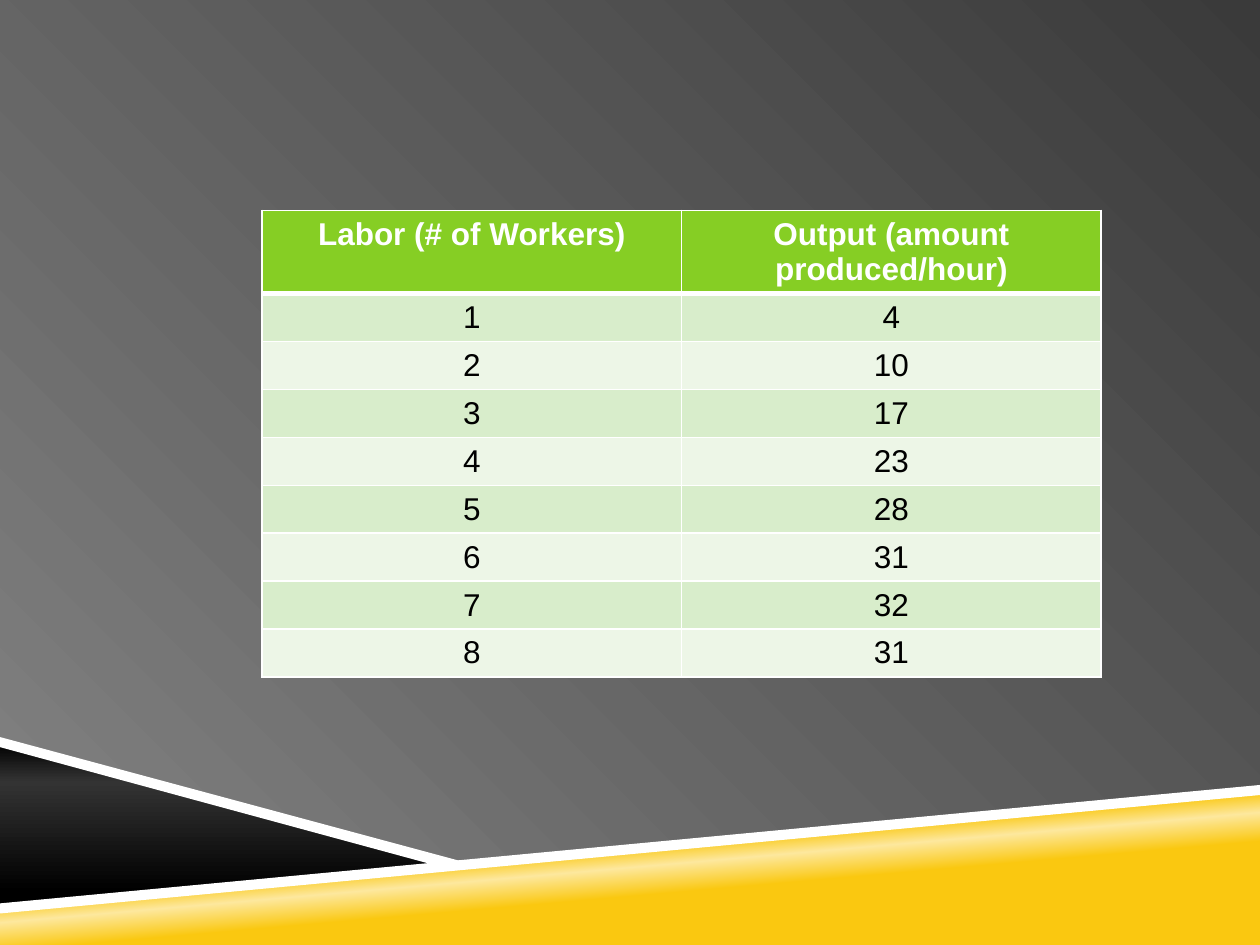
from lxml import etree
from pptx import Presentation
from pptx.dml.color import RGBColor
from pptx.enum.text import PP_ALIGN
from pptx.oxml import parse_xml
from pptx.oxml.ns import nsdecls, qn
from pptx.util import Inches, Pt

HEADINGS = ("Labor (# of Workers)", "Output (amount produced/hour)")
OUTPUTS = (4, 10, 17, 23, 28, 31, 32, 31)
ROWS = [HEADINGS] + [(str(labor), str(output)) for labor, output in enumerate(OUTPUTS, 1)]

BACKDROP = [(0, "848484"), (100, "3A3A3A")]
GOLD = [(0, "FAC810"), (39, "FAC810"), (50, "FDE89E"), (58, "FAC810"), (100, "FAC810")]
BLACK = [(0, "000000"), (24, "333333"), (90, "000000"), (100, "000000")]
FROM_BOTTOM_LEFT = '<a:path path="circle"><a:fillToRect t="100000" r="100000"/></a:path>'
GOLD_DIRECTION = f'<a:lin ang="{265 * 60000}" scaled="0"/>'
BLACK_DIRECTION = f'<a:lin ang="{90 * 60000}" scaled="0"/>'

BANDS = [
    ([(0, 7.21), (10, 6.27), (10, 7.5), (0, 7.5)], GOLD, GOLD_DIRECTION),
    ([(0, 5.89), (3.59, 6.85), (0, 7.21)], BLACK, BLACK_DIRECTION),
    ([(10, 6.23), (0, 7.17), (0, 7.25), (10, 6.31)], "FFFFFF", None),
    ([(0, 5.85), (0, 5.93), (3.5, 6.88), (3.75, 6.86)], "FFFFFF", None),
]

LEFT, TOP, COLUMN_WIDTH = 2.08, 1.67, 3.33
HEADER_HEIGHT, ROW_HEIGHT = 0.64, 0.37
HEADER_FILL, STRIPES = "86CE24", ("EDF6E7", "D8EDCB")


def color(value):
    return RGBColor.from_string(value)


def set_gradient(fill, owner, stops, direction):
    fill.gradient()
    default = owner.find(".//" + qn("a:gradFill"))
    marks = "".join(
        f'<a:gs pos="{position * 1000}"><a:srgbClr val="{value}"/></a:gs>'
        for position, value in stops
    )
    gradient = parse_xml(
        f'<a:gradFill {nsdecls("a")} rotWithShape="1"><a:gsLst>{marks}</a:gsLst>{direction}</a:gradFill>'
    )
    default.getparent().replace(default, gradient)


def add_band(slide, points, paint, direction):
    corners = [(Inches(x), Inches(y)) for x, y in points]
    builder = slide.shapes.build_freeform(*corners[0])
    builder.add_line_segments(corners[1:], close=True)
    band = builder.convert_to_shape()
    band.shadow.inherit = False
    band.line.fill.background()
    if direction:
        set_gradient(band.fill, band.element, paint, direction)
    else:
        band.fill.solid()
        band.fill.fore_color.rgb = color(paint)


def set_borders(cell, row):
    properties = cell._tc.get_or_add_tcPr()
    widths = {"lnL": 1, "lnR": 1, "lnT": 3 if row == 1 else 1, "lnB": 3 if row == 0 else 1}
    for index, (side, width) in enumerate(widths.items()):
        border = etree.Element(qn("a:" + side), w=str(Pt(width)))
        solid = etree.SubElement(border, qn("a:solidFill"))
        etree.SubElement(solid, qn("a:srgbClr"), val="FFFFFF")
        properties.insert(index, border)


def fill_cell(cell, text, row):
    cell.text_frame.text = text
    paragraph = cell.text_frame.paragraphs[0]
    paragraph.alignment = PP_ALIGN.CENTER
    font = paragraph.runs[0].font
    font.name, font.size, font.bold = "Arial", Pt(18), row == 0
    font.color.rgb = color("000000" if row else "FFFFFF")
    cell.fill.solid()
    cell.fill.fore_color.rgb = color(STRIPES[row % 2] if row else HEADER_FILL)
    set_borders(cell, row)


def add_output_table(slide):
    height = HEADER_HEIGHT + ROW_HEIGHT * len(OUTPUTS)
    table = slide.shapes.add_table(
        len(ROWS), len(HEADINGS), Inches(LEFT), Inches(TOP),
        Inches(COLUMN_WIDTH * len(HEADINGS)), Inches(height),
    ).table
    for row, texts in enumerate(ROWS):
        table.rows[row].height = Inches(ROW_HEIGHT if row else HEADER_HEIGHT)
        for column, text in enumerate(texts):
            fill_cell(table.cell(row, column), text, row)


def main():
    deck = Presentation()
    deck.slide_width, deck.slide_height = Inches(10), Inches(7.5)
    slide = deck.slides.add_slide(deck.slide_layouts[6])
    set_gradient(slide.background.fill, slide.element, BACKDROP, FROM_BOTTOM_LEFT)
    for points, paint, direction in BANDS:
        add_band(slide, points, paint, direction)
    add_output_table(slide)
    deck.save("out.pptx")


if __name__ == "__main__":
    main()
